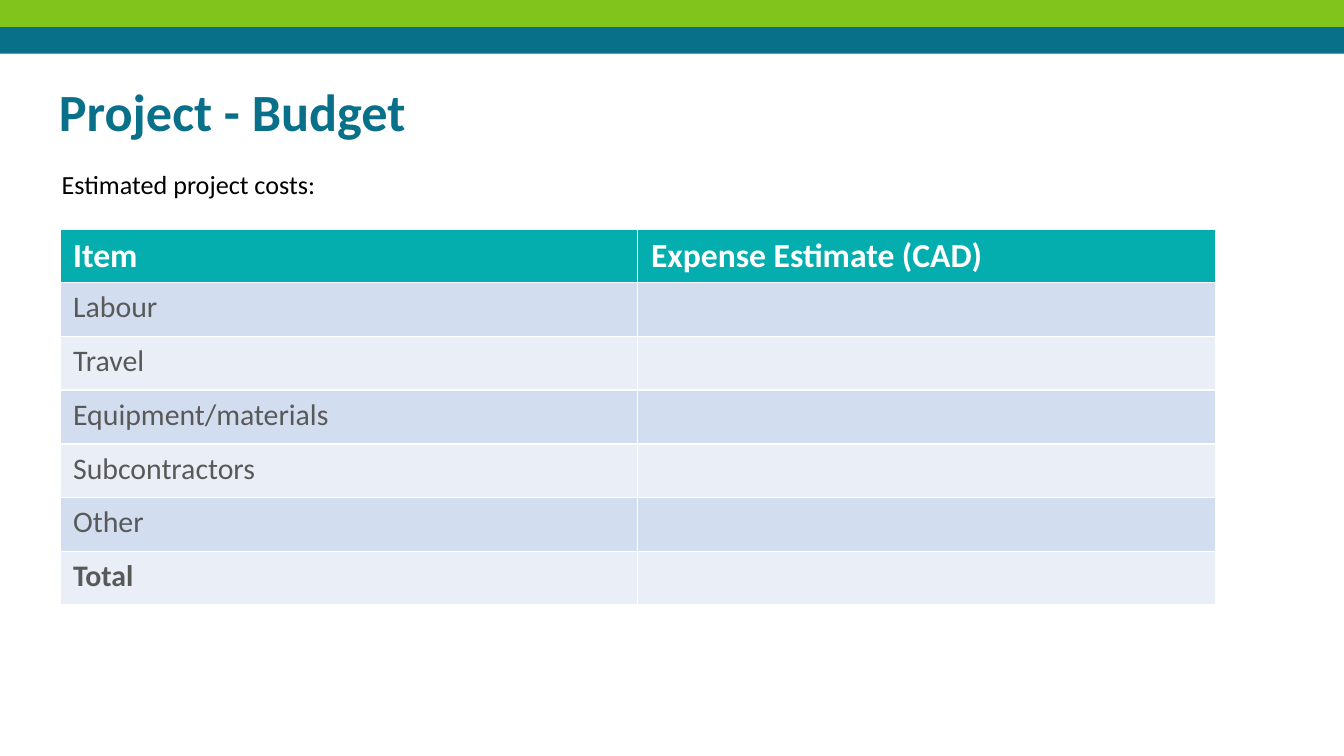
"""Build the project budget slide with its cost table."""
import pptx
import pptx.dml.color
import pptx.enum.shapes
import pptx.oxml.ns
import pptx.util
from lxml import etree

Pt = pptx.util.Pt
COLOURS = {
    "green": "80C41C",
    "blue": "09708A",
    "teal": "05AEAE",
    "band_dark": "D2DEEF",
    "band_light": "EAEFF7",
    "grey": "595959",
    "black": "000000",
    "white": "FFFFFF",
}


def rgb(name):
    return pptx.dml.color.RGBColor.from_string(COLOURS[name])


def write(frame, text, size, colour, bold=False):
    paragraph = frame.paragraphs[0]
    paragraph.text = text
    for run in paragraph.runs:
        run.font.name = "Calibri"
        run.font.size = Pt(size)
        run.font.bold = bold
        run.font.color.rgb = rgb(colour)


deck = pptx.Presentation()
deck.slide_width, deck.slide_height = Pt(720), Pt(405)
slide = deck.slides.add_slide(deck.slide_layouts[6])

for top, colour in ((14.4, "blue"), (0, "green")):
    stripe = slide.shapes.add_shape(
        pptx.enum.shapes.MSO_SHAPE.RECTANGLE, 0, Pt(top), Pt(720), Pt(14.4))
    stripe.shadow.inherit = False
    stripe.fill.solid()
    stripe.fill.fore_color.rgb = rgb(colour)
    stripe.line.fill.background()

headings = (
    ("Project - Budget", 24.5, 35.3, 671, 45.4, 7.2, 28, "blue", True),
    ("Estimated project costs:", 25.9, 86.4, 668, 29.5, 3.6, 14, "black", False),
)
for text, left, top, width, height, inset, size, colour, bold in headings:
    heading = slide.shapes.add_textbox(Pt(left), Pt(top), Pt(width), Pt(height))
    frame = heading.text_frame
    frame.word_wrap = True
    frame.margin_top = frame.margin_bottom = Pt(inset)
    write(frame, text, size, colour, bold)

costs = (
    ("Item", "Expense Estimate (CAD)"),
    ("Labour", ""),
    ("Travel", ""),
    ("Equipment/materials", ""),
    ("Subcontractors", ""),
    ("Other", ""),
    ("Total", ""),
)
budget = slide.shapes.add_table(
    len(costs), 2, Pt(32), Pt(122.6), Pt(619.2), Pt(28.8 * len(costs))).table
for column in budget.columns:
    column.width = Pt(309.6)

for row_number, entries in enumerate(costs):
    budget.rows[row_number].height = Pt(28.8)
    if row_number == 0:
        fill, size, colour = "teal", 18, "white"
    else:
        fill = "band_dark" if row_number % 2 else "band_light"
        size, colour = 16, "grey"
    for column_number, entry in enumerate(entries):
        cell = budget.cell(row_number, column_number)
        cell.fill.solid()
        cell.fill.fore_color.rgb = rgb(fill)
        write(cell.text_frame, entry, size, colour, entry == "Total" or row_number == 0)
        if not entry:
            blank_entry = cell.text_frame.paragraphs[0]._p
            etree.SubElement(
                blank_entry, pptx.oxml.ns.qn("a:endParaRPr"), sz=str(size * 100))

deck.save("out.pptx")
